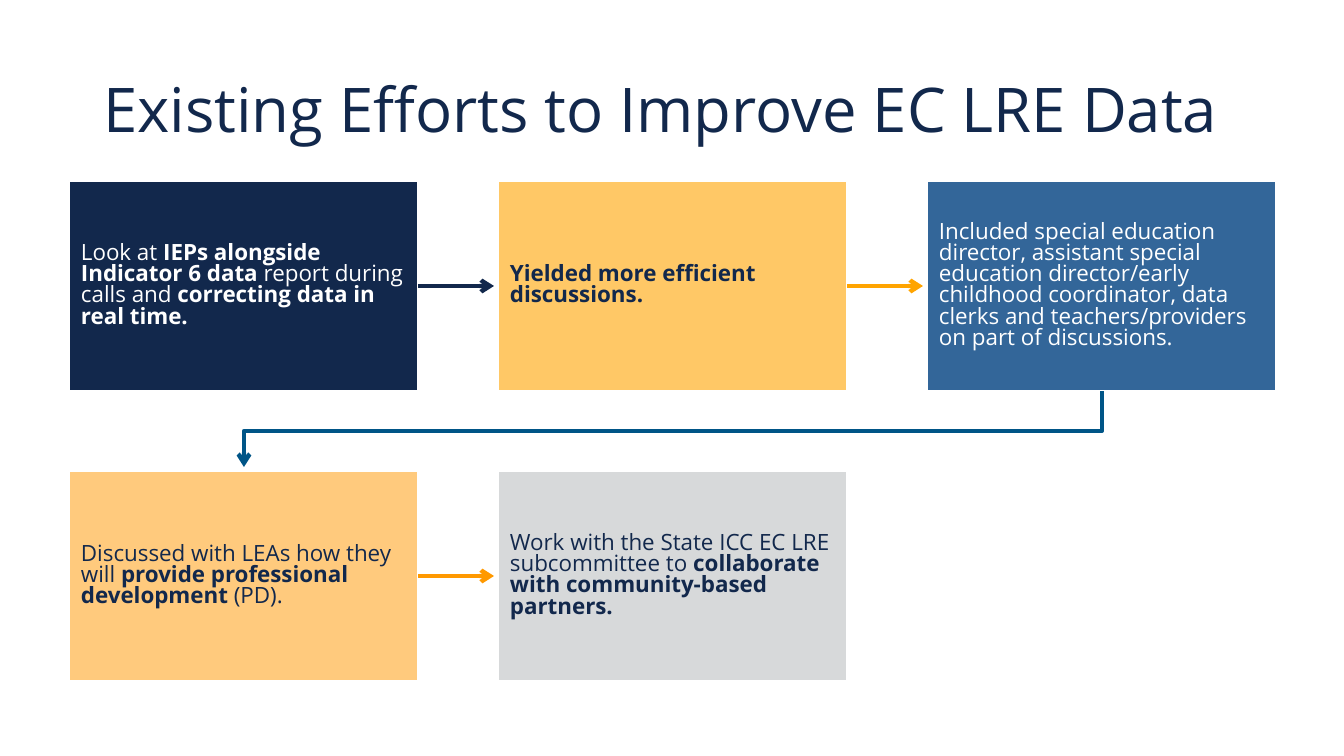
from lxml.etree import SubElement
from pptx import Presentation
from pptx.dml.color import RGBColor
from pptx.enum.shapes import MSO_CONNECTOR, MSO_SHAPE
from pptx.enum.text import MSO_ANCHOR, MSO_AUTO_SIZE, PP_ALIGN
from pptx.oxml.ns import qn
from pptx.util import Inches, Pt

PX = Inches(1) / 100.8
NAVY = RGBColor(0x12, 0x28, 0x4C)
WHITE = RGBColor(0xFF, 0xFF, 0xFF)
GOLD = RGBColor(0xFF, 0xC8, 0x66)
BLUE = RGBColor(0x33, 0x66, 0x99)
PEACH = RGBColor(0xFF, 0xCA, 0x7D)
GREY = RGBColor(0xD7, 0xD9, 0xDA)
AMBER = RGBColor(0xFF, 0xA4, 0x00)
ORANGE = RGBColor(0xFF, 0x99, 0x00)
TEAL = RGBColor(0x00, 0x55, 0x87)

FONT = "Open Sans"
COLUMNS = 3
BOX_WIDTH, BOX_HEIGHT = 349, 210
COLUMN_PITCH, ROW_PITCH = 429, 290
ARROW_GAP = 4

# Each step: fill, text colour, colour of the arrow to the next step, and
# text pieces that alternate between regular and bold.
STEPS = [
    (NAVY, WHITE, NAVY,
     ["Look at ", "IEPs alongside Indicator 6 data",
      " report during calls and ", "correcting data in real time."]),
    (GOLD, NAVY, AMBER, ["", "Yielded more efficient discussions."]),
    (BLUE, WHITE, TEAL,
     ["Included special education director, assistant special education "
      "director/early childhood coordinator, data clerks and "
      "teachers/providers on part of discussions."]),
    (PEACH, NAVY, ORANGE,
     ["Discussed with LEAs how they will ",
      "provide professional development ", "(PD)."]),
    (GREY, NAVY, None,
     ["Work with the State ICC EC LRE subcommittee to ",
      "collaborate with community-based partners."]),
]


def px(length):
    """Turn a length in px into EMU."""
    return round(length * PX)


def apply_format(target, values):
    """Set each named attribute of the target."""
    for name, value in values.items():
        setattr(target, name, value)


def add_span(para, text, size, color, bold=False):
    """Add one formatted run to a paragraph."""
    span = para.add_run()
    span.text = text
    apply_format(span.font, {"name": FONT, "size": Pt(size), "bold": bold})
    span.font.color.rgb = color


def fill_title(page, left, top, width, height):
    """Place and fill the title placeholder."""
    title = page.shapes.title
    apply_format(title, {"left": px(left), "top": px(top),
                         "width": px(width), "height": px(height)})
    apply_format(title.text_frame, {
        "vertical_anchor": MSO_ANCHOR.MIDDLE, "word_wrap": True,
        "auto_size": MSO_AUTO_SIZE.NONE})
    para = title.text_frame.paragraphs[0]
    apply_format(para, {"alignment": PP_ALIGN.LEFT, "line_spacing": 0.9})
    add_span(para, "Existing Efforts to Improve EC LRE Data", 44, NAVY)


def add_step(page, left, top, fill, color, pieces):
    """Draw one step box with its text."""
    box = page.shapes.add_shape(MSO_SHAPE.RECTANGLE, px(left), px(top),
                                px(BOX_WIDTH), px(BOX_HEIGHT))
    box.shadow.inherit = False
    box.fill.solid()
    box.fill.fore_color.rgb = fill
    box.line.color.rgb = WHITE
    box.line.width = Pt(1)
    frame = box.text_frame
    inset = px(12)
    apply_format(frame, {
        "margin_left": inset, "margin_right": inset, "margin_top": inset,
        "margin_bottom": inset, "word_wrap": True,
        "vertical_anchor": MSO_ANCHOR.MIDDLE})
    para = frame.paragraphs[0]
    apply_format(para, {"alignment": PP_ALIGN.LEFT, "line_spacing": 0.79})
    for index, piece in enumerate(pieces):
        if piece:
            add_span(para, piece, 16, color, index % 2 == 1)
    return box


def style_arrow(arrow, color):
    """Give a line its colour, width and open arrowhead."""
    arrow.line.color.rgb = color
    arrow.line.width = Pt(3)
    properties = arrow.element.spPr
    SubElement(properties.find(qn("a:ln")), qn("a:tailEnd"), type="arrow")
    SubElement(properties, qn("a:effectLst"))


def add_straight_arrow(page, box, left, top, color):
    """Join a step to the next one in its row."""
    start, middle = left + BOX_WIDTH, px(top + BOX_HEIGHT / 2)
    arrow = page.shapes.add_connector(
        MSO_CONNECTOR.STRAIGHT, px(start), middle,
        px(left + COLUMN_PITCH - ARROW_GAP), middle)
    arrow.begin_connect(box, 3)
    style_arrow(arrow, color)


def add_return_arrow(page, left, top, first_left, color):
    """Lead from the end of a row to the start of the next one."""
    start, end = left + BOX_WIDTH / 2, first_left + BOX_WIDTH / 2
    bottom, next_top = top + BOX_HEIGHT, top + ROW_PITCH
    middle = (bottom + next_top) / 2
    builder = page.shapes.build_freeform(start, bottom, scale=PX)
    builder.add_line_segments(
        [(start, middle), (end, middle), (end, next_top - ARROW_GAP)],
        close=False)
    arrow = builder.convert_to_shape()
    arrow.fill.background()
    style_arrow(arrow, color)


def add_flow(page, left, top):
    """Lay the steps out row by row and link them."""
    for index, (fill, color, arrow_color, pieces) in enumerate(STEPS):
        row, column = divmod(index, COLUMNS)
        box_left = left + column * COLUMN_PITCH
        box_top = top + row * ROW_PITCH
        box = add_step(page, box_left, box_top, fill, color, pieces)
        if arrow_color is None:
            continue
        if column == COLUMNS - 1:
            add_return_arrow(page, box_left, box_top, left, arrow_color)
        else:
            add_straight_arrow(page, box, box_left, box_top, arrow_color)


def main():
    """Build the slide and save it."""
    deck = Presentation()
    apply_format(deck, {"slide_width": px(1344), "slide_height": px(756)})
    page = deck.slides.add_slide(deck.slide_layouts[5])
    fill_title(page, 93, 40, 1159, 146)
    add_flow(page, 69, 181)
    deck.save("out.pptx")


if __name__ == "__main__":
    main()
